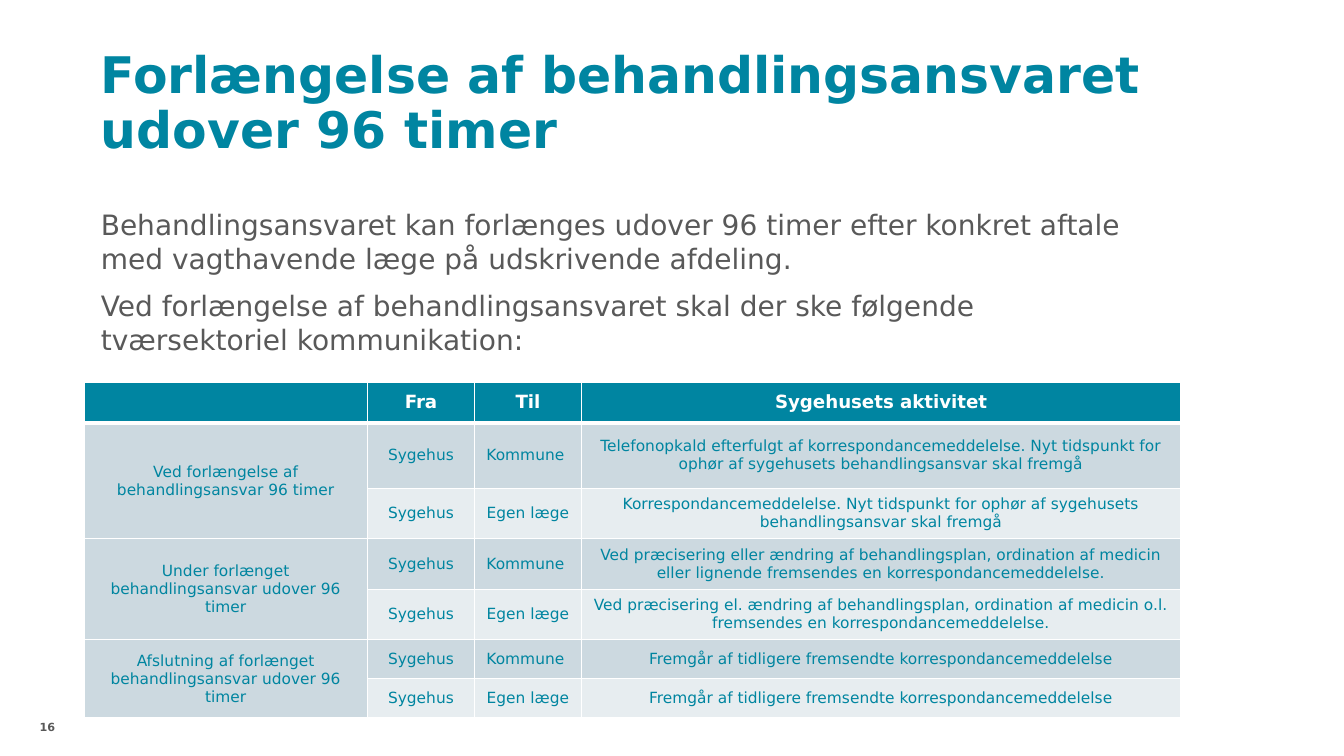
import pptx
import pptx.dml.color
import pptx.enum.text
import pptx.oxml
import pptx.oxml.ns
import pptx.util

COLORS = {"teal": "0085A1", "cell_text": "0085A0", "grey": "595959",
          "white": "FFFFFF", "dark_band": "CCD9E0", "light_band": "E7EDF0"}
FONT = "DejaVu Sans"
SLIDE_WIDTH = pptx.util.Inches(13.33)
SLIDE_HEIGHT = pptx.util.Inches(7.5)
COLUMN = SLIDE_WIDTH / 40
ROW = SLIDE_HEIGHT / 30

TITLE = "Forlængelse af behandlingsansvaret udover 96 timer"
INTRO = [
    "Behandlingsansvaret kan forlænges udover 96 timer efter konkret aftale "
    "med vagthavende læge på udskrivende afdeling.",
    "Ved forlængelse af behandlingsansvaret skal der ske følgende "
    "tværsektoriel kommunikation:",
]
HEADINGS = ["", "Fra", "Til", "Sygehusets aktivitet"]
SENDER = "Sygehus"
RECIPIENTS = ["Kommune ", "Egen læge"]
PHASES = [
    ("Ved forlængelse af behandlingsansvar 96 timer",
     ["Telefonopkald efterfulgt af korrespondancemeddelelse. Nyt tidspunkt for "
      "ophør af sygehusets behandlingsansvar skal fremgå",
      "Korrespondancemeddelelse. Nyt tidspunkt for ophør af sygehusets "
      "behandlingsansvar skal fremgå"]),
    ("Under forlænget behandlingsansvar udover 96 timer",
     ["Ved præcisering eller ændring af behandlingsplan, ordination af medicin "
      "eller lignende fremsendes en korrespondancemeddelelse.",
      "Ved præcisering el. ændring af behandlingsplan, ordination af medicin "
      "o.l. fremsendes en korrespondancemeddelelse."]),
    ("Afslutning af forlænget behandlingsansvar udover 96 timer",
     ["Fremgår af tidligere fremsendte korrespondancemeddelelse"] * 2),
]
COLUMN_WEIGHTS = [2.81, 1.06, 1.06, 5.94]
ROW_WEIGHTS = [0.34, 0.65, 0.5, 0.5, 0.5, 0.39, 0.39]


def grid_box(left, top, columns, rows):
    """Turn grid units into left, top, width and height."""
    return (int(left * COLUMN), int(top * ROW),
            int(columns * COLUMN), int(rows * ROW))


def rgb(name):
    """Look up a named colour."""
    return pptx.dml.color.RGBColor.from_string(COLORS[name])


def format_runs(paragraph, size, color, bold=False):
    """Give every run of a paragraph its font."""
    for run in paragraph.runs:
        run.font.name = FONT
        run.font.size = pptx.util.Pt(size)
        run.font.bold = bold
        run.font.color.rgb = rgb(color)


def prepare_frame(region, box):
    """Place a text region and return its frame without margins."""
    region.left, region.top, region.width, region.height = box
    frame = region.text_frame
    frame.word_wrap = True
    frame.auto_size = pptx.enum.text.MSO_AUTO_SIZE.NONE
    frame.margin_left = frame.margin_right = 0
    frame.margin_top = frame.margin_bottom = 0
    return frame


def fill_title(slide, box):
    """Write the slide title."""
    frame = prepare_frame(slide.shapes.title, box)
    frame.vertical_anchor = pptx.enum.text.MSO_ANCHOR.BOTTOM
    frame.text = TITLE
    heading = frame.paragraphs[0]
    heading.alignment = pptx.enum.text.PP_ALIGN.LEFT
    heading.line_spacing = 0.9
    format_runs(heading, 36, "teal", True)


def fill_intro(slide, box):
    """Write the unbulleted introduction."""
    frame = prepare_frame(slide.placeholders[1], box)
    frame.text = "\n".join(INTRO)
    for position, paragraph in enumerate(frame.paragraphs):
        properties = paragraph._p.get_or_add_pPr()
        properties.set("marL", "0")
        properties.set("indent", "0")
        pptx.oxml.ns.qn("a:buNone")
        properties.append(pptx.oxml.parse_xml(
            f'<a:buNone {pptx.oxml.ns.nsdecls("a")}/>'))
        paragraph.line_spacing = pptx.util.Pt(24)
        paragraph.space_before = pptx.util.Pt(10 if position else 0)
        format_runs(paragraph, 20, "grey")


def add_page_number(slide, box):
    """Write the page number."""
    frame = prepare_frame(slide.shapes.add_textbox(*box), box)
    frame.text = "16"
    number = frame.paragraphs[0]
    number.alignment = pptx.enum.text.PP_ALIGN.RIGHT
    format_runs(number, 8, "grey", True)


def add_borders(cell, bottom_width, top_width):
    """Draw white borders around a cell."""
    widths = {"L": 1, "R": 1, "T": top_width, "B": bottom_width}
    for side, width in widths.items():
        cell._tc.get_or_add_tcPr().append(pptx.oxml.parse_xml(
            f'<a:ln{side} {pptx.oxml.ns.nsdecls("a")} w="{pptx.util.Pt(width)}">'
            f'<a:solidFill><a:srgbClr val="{COLORS["white"]}"/></a:solidFill>'
            f'</a:ln{side}>'))


def format_cell(cell, row, column):
    """Style a cell by its place in the table."""
    header = row == 0
    add_borders(cell, 3 if header else 1, 3 if row == 1 else 1)
    band = "dark_band" if row % 2 or column == 0 else "light_band"
    cell.fill.solid()
    cell.fill.fore_color.rgb = rgb("teal" if header else band)
    cell.vertical_anchor = pptx.enum.text.MSO_ANCHOR.MIDDLE
    paragraph = cell.text_frame.paragraphs[0]
    paragraph.alignment = pptx.enum.text.PP_ALIGN.CENTER
    format_runs(paragraph, 13 if header else 11,
                "white" if header else "cell_text", header)


def add_communication_table(slide, box):
    """Build the table of messages for each phase."""
    width, height = box[2:]
    records = [HEADINGS]
    for phase, activities in PHASES:
        for label, recipient, activity in zip([phase, ""], RECIPIENTS, activities):
            records.append([label, SENDER, recipient, activity])
    table = slide.shapes.add_table(len(records), len(HEADINGS), *box).table
    for column, weight in zip(table.columns, COLUMN_WEIGHTS):
        column.width = int(width * weight / sum(COLUMN_WEIGHTS))
    for row, weight in zip(table.rows, ROW_WEIGHTS):
        row.height = int(height * weight / sum(ROW_WEIGHTS))
    for row, record in enumerate(records):
        for column, wording in enumerate(record):
            cell = table.cell(row, column)
            cell.text = wording
            format_cell(cell, row, column)
    for first in range(1, len(records), len(RECIPIENTS)):
        table.cell(first, 0).merge(table.cell(first + 1, 0))


def main():
    """Build and save the slide."""
    deck = pptx.Presentation()
    deck.slide_width, deck.slide_height = SLIDE_WIDTH, SLIDE_HEIGHT
    slide = deck.slides.add_slide(deck.slide_layouts[1])
    fill_intro(slide, grid_box(3, 8.24, 30.84, 19.2))
    add_page_number(slide, grid_box(0.48, 28.6, 1.17, 1.4))
    fill_title(slide, grid_box(3, 1.6, 31.65, 4.72))
    add_communication_table(slide, grid_box(2.5, 15.16, 32.64, 13.08))
    deck.save("out.pptx")


if __name__ == "__main__":
    main()
